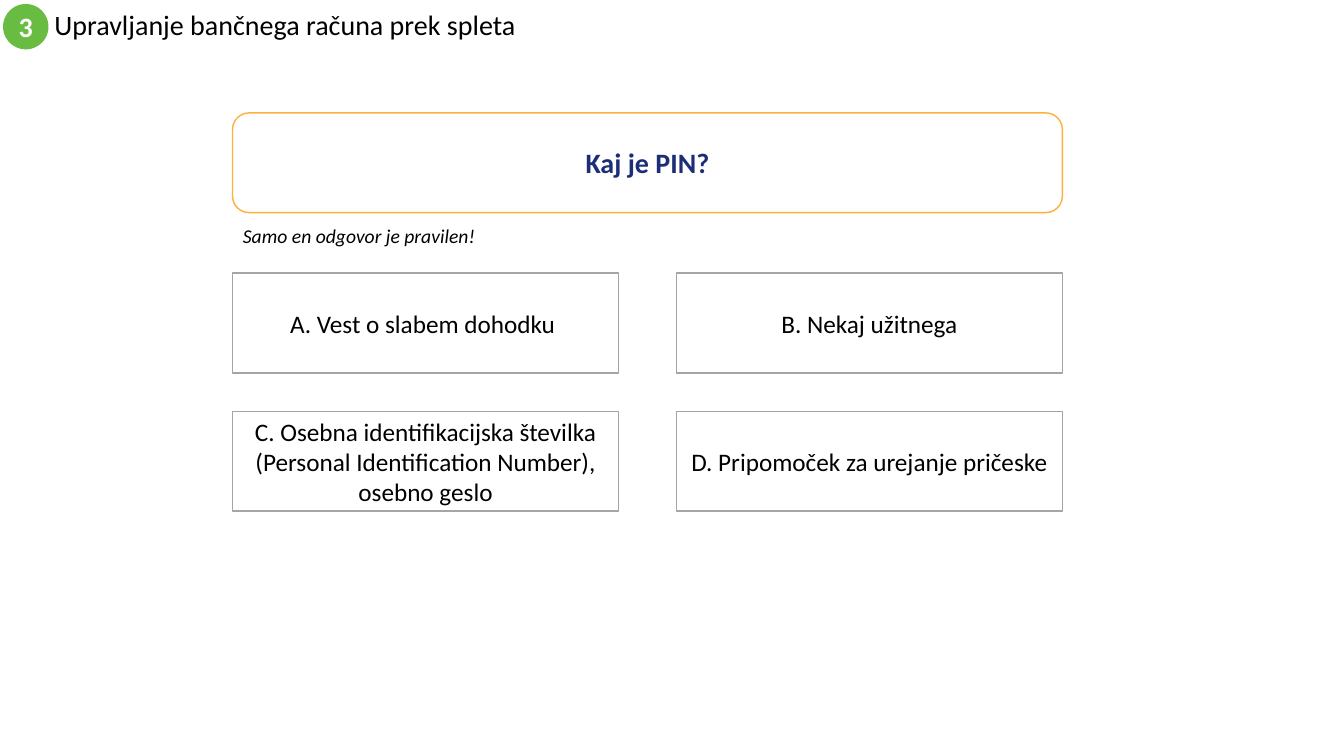
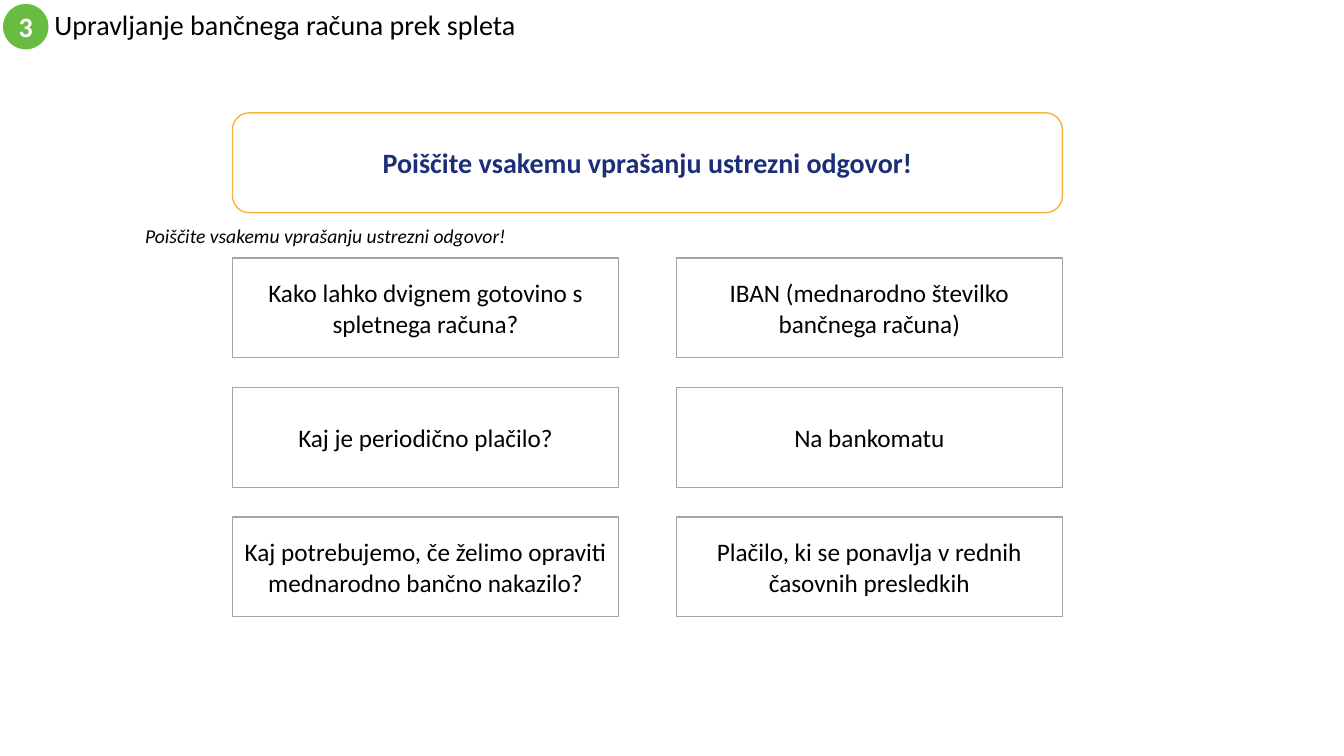
import pptx
import pptx.util
import pptx.dml.color
import pptx.enum.shapes
import pptx.enum.text

SHAPE = pptx.enum.shapes.MSO_SHAPE
ALIGN = pptx.enum.text.PP_ALIGN
ANCHOR = pptx.enum.text.MSO_ANCHOR
FIT = pptx.enum.text.MSO_AUTO_SIZE


def rgb(value):
    """Turn a hex string into a colour."""
    return pptx.dml.color.RGBColor.from_string(value)


def write(tf, text, size=18, color="000000", bold=False, italic=False,
          align=ALIGN.CENTER, anchor=ANCHOR.MIDDLE, wrap=True, fit=FIT.NONE, spacing=1.0):
    """Fill a text frame with one formatted paragraph."""
    tf.word_wrap = wrap
    tf.auto_size = fit
    tf.vertical_anchor = anchor
    p = tf.paragraphs[0]
    p.alignment = align
    p.line_spacing = spacing
    r = p.add_run()
    r.text = text
    r.font.name = "Calibri"
    r.font.size = pptx.util.Pt(size)
    r.font.bold = bold
    r.font.italic = italic
    r.font.color.rgb = rgb(color)


class Deck:
    """Quiz style and current slide, with lengths in percent of the slide."""

    GREEN, ORANGE, NAVY, GREY, WHITE = "68BC42", "FCB13A", "1C2E78", "A5A5A5", "FFFFFF"
    LEFT, WIDTH = 17.3, 61.75
    OPTION_WIDTH, BOX_HEIGHT = 28.73, 13.2

    def __init__(self):
        """Start a widescreen presentation."""
        self.prs = pptx.Presentation()
        self.prs.slide_width = pptx.util.Inches(13.33)
        self.prs.slide_height = pptx.util.Inches(7.5)
        self.s = None

    def place(self, x, y, w, h):
        """Convert percentages to a left, top, width and height."""
        across, down = self.prs.slide_width / 100, self.prs.slide_height / 100
        return [round(v) for v in (x * across, y * down, w * across, h * down)]

    def slide(self, title, number):
        """Add a slide with its title and numbered badge."""
        self.s = self.prs.slides.add_slide(self.prs.slide_layouts[5])
        sp = self.s.shapes.title
        sp.left, sp.top, sp.width, sp.height = self.place(3.3, 0.53, 60, 6)
        write(sp.text_frame, title, size=20, align=ALIGN.LEFT, spacing=0.9)
        self.box(SHAPE.OVAL, (0.23, 0.53, 3.38, 6), number, fill=self.GREEN,
                 size=20, color=self.WHITE, bold=True, wrap=False)

    def box(self, kind, at, text, fill=WHITE, line=None, **style):
        """Add a filled shape with centred text."""
        sp = self.s.shapes.add_shape(kind, *self.place(*at))
        sp.shadow.inherit = False
        sp.fill.solid()
        sp.fill.fore_color.rgb = rgb(fill)
        if line:
            sp.line.color.rgb = rgb(line)
            sp.line.width = pptx.util.Pt(1)
        else:
            sp.line.fill.background()
        write(sp.text_frame, text, **style)

    def question(self, text):
        """Add the rounded question panel."""
        self.box(SHAPE.ROUNDED_RECTANGLE, (self.LEFT, 14.93, self.WIDTH, self.BOX_HEIGHT),
                 text, line=self.ORANGE, size=20, color=self.NAVY, bold=True)

    def hint(self, text, x, w, align):
        """Add the italic instruction below the question."""
        sp = self.s.shapes.add_textbox(*self.place(x, 28.93, w, 7.6))
        write(sp.text_frame, text, size=14, italic=True, align=align,
              anchor=ANCHOR.TOP, wrap=False, fit=FIT.SHAPE_TO_FIT_TEXT)

    def options(self, texts, top, pitch):
        """Lay out the option boxes in two columns, row by row."""
        step = self.WIDTH - self.OPTION_WIDTH
        for i, text in enumerate(texts):
            row, col = divmod(i, 2)
            self.box(SHAPE.RECTANGLE,
                     (self.LEFT + col * step, top + row * pitch,
                      self.OPTION_WIDTH, self.BOX_HEIGHT),
                     text, line=self.GREY)


def main():
    """Build the two quiz slides."""
    title = "Upravljanje bančnega računa prek spleta"
    matching = "Poiščite vsakemu vprašanju ustrezni odgovor!"
    deck = Deck()

    deck.slide(title, "3")
    deck.question("Kaj je PIN?")
    deck.hint("Samo en odgovor je pravilen!", 17.33, 18.9, ALIGN.LEFT)
    deck.options([
        "A. Vest o slabem dohodku ",
        "B. Nekaj užitnega",
        "C. Osebna identifikacijska številka (Personal Identification Number), osebno geslo",
        "D. Pripomoček za urejanje pričeske",
    ], top=36.13, pitch=18.27)

    deck.slide(title, "3")
    deck.question(matching)
    deck.hint(matching, 9.68, 29.1, ALIGN.CENTER)
    deck.options([
        "Kako lahko dvignem gotovino s spletnega računa?",
        "IBAN (mednarodno številko bančnega računa)",
        "Kaj je periodično plačilo?",
        "Na bankomatu",
        "Kaj potrebujemo, če želimo opraviti mednarodno bančno nakazilo?",
        "Plačilo, ki se ponavlja v rednih časovnih presledkih",
    ], top=34.13, pitch=17.13)

    deck.prs.save("out.pptx")


if __name__ == "__main__":
    main()
